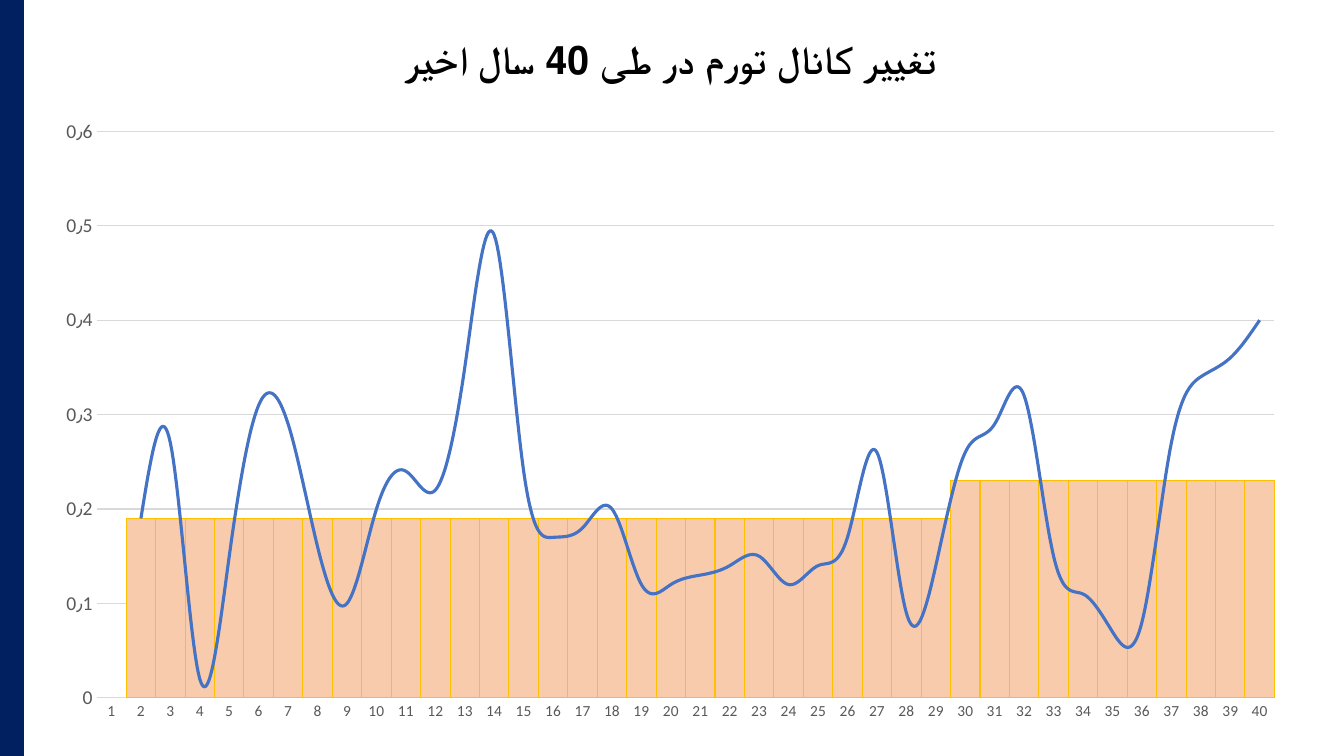
"""Build a slide charting forty years of inflation against its average channel."""
from typing import NamedTuple

from lxml import etree
from pptx import Presentation
from pptx.chart.chart import Chart
from pptx.chart.data import CategoryChartData
from pptx.dml.color import RGBColor
from pptx.dml.line import LineFormat
from pptx.enum.chart import XL_CHART_TYPE, XL_MARKER_STYLE, XL_TICK_MARK
from pptx.enum.shapes import MSO_SHAPE
from pptx.enum.text import MSO_AUTO_SIZE, PP_ALIGN
from pptx.oxml import parse_xml
from pptx.oxml.ns import nsdecls, qn
from pptx.slide import Slide
from pptx.util import Inches, Pt

COLUMNS = XL_CHART_TYPE.COLUMN_CLUSTERED
NO_MARKER = XL_MARKER_STYLE.NONE
NO_TICK = XL_TICK_MARK.NONE
RECTANGLE = MSO_SHAPE.RECTANGLE
CENTER = PP_ALIGN.CENTER
GROW = MSO_AUTO_SIZE.SHAPE_TO_FIT_TEXT

SLIDE_WIDTH, SLIDE_HEIGHT = Inches(13.33), Inches(7.5)
FONT = "Calibri"
NUMBER_FORMAT = "[$-3010000]General"
COLORS = {
    "sidebar": "002060",
    "title": "000000",
    "label": "595959",
    "grid": "D9D9D9",
    "channel": "F8CBAD",
    "channel_edge": "FFC000",
    "inflation": "4472C4",
}
HEADLINE = "تغییر کانال تورم در طی 40 سال اخیر"
CHANNEL = [None] + [0.19] * 28 + [0.23] * 11
INFLATION = [
    None, 0.19, 0.27, 0.02, 0.15, 0.31, 0.29, 0.16, 0.1, 0.2,
    0.24, 0.22, 0.35, 0.49, 0.24, 0.17, 0.18, 0.2, 0.12, 0.12,
    0.13, 0.14, 0.15, 0.12, 0.14, 0.17, 0.26, 0.09, 0.14, 0.26,
    0.29, 0.32, 0.15, 0.11, 0.07, 0.08, 0.27, 0.34, 0.36, 0.4,
]


class Area(NamedTuple):
    """A rectangle in percent of the slide's width and height."""

    left: float
    top: float
    width: float
    height: float

    def box(self) -> tuple[int, int, int, int]:
        """Return the rectangle in slide units."""
        column, row = SLIDE_WIDTH / 100, SLIDE_HEIGHT / 100
        return (round(self.left * column), round(self.top * row),
                round(self.width * column), round(self.height * row))


SIDEBAR_AREA = Area(0, 0, 1.73, 100)
CHART_AREA = Area(3.08, 14.13, 93.62, 82.93)
HEADLINE_AREA = Area(27.16, 4, 45.46, 7.6)
PLOT_PERCENT = {"x": 4.4, "y": 3.9, "w": 93.6, "h": 90.4}


def color(name: str) -> RGBColor:
    """Look up a named colour."""
    return RGBColor.from_string(COLORS[name])


def style_line(line: LineFormat, name: str, points: float) -> None:
    """Give a line its colour and width."""
    line.color.rgb = color(name)
    line.width = Pt(points)


def add_sidebar(slide: Slide) -> None:
    """Draw the band along the left edge."""
    sidebar = slide.shapes.add_shape(RECTANGLE, *SIDEBAR_AREA.box())
    sidebar.shadow.inherit = False
    sidebar.fill.solid()
    sidebar.fill.fore_color.rgb = color("sidebar")
    style_line(sidebar.line, "sidebar", 1)


def move_inflation_to_line(chart: Chart) -> None:
    """Turn the second column series into a line on the same axes."""
    columns = chart.plots[0]._element
    inflation = columns.findall(qn("c:ser"))[1]
    for column_setting in inflation.findall(qn("c:invertIfNegative")):
        inflation.remove(column_setting)
    line_plot = parse_xml(
        f'<c:lineChart {nsdecls("c")}><c:grouping val="standard"/>'
        '<c:varyColors val="0"/><c:marker val="1"/></c:lineChart>'
    )
    line_plot.insert(2, inflation)
    for axis_id in columns.findall(qn("c:axId")):
        etree.SubElement(line_plot, qn("c:axId")).set("val", axis_id.get("val"))
    columns.addnext(line_plot)


def fix_plot_area(chart: Chart) -> None:
    """Place the inner plot area at fixed shares of the chart."""
    plot_area = chart._chartSpace.find(f".//{qn('c:plotArea')}")
    for automatic in plot_area.findall(qn("c:layout")):
        plot_area.remove(automatic)
    modes = "".join(f'<c:{side}Mode val="edge"/>' for side in "xy")
    shares = "".join(
        f'<c:{side} val="{percent / 100:.3f}"/>' for side, percent in PLOT_PERCENT.items()
    )
    plot_area.insert(0, parse_xml(
        f'<c:layout {nsdecls("c")}><c:manualLayout><c:layoutTarget val="inner"/>'
        f"{modes}{shares}</c:manualLayout></c:layout>"
    ))


def style_axes(chart: Chart) -> None:
    """Format both axes, their labels and the gridlines."""
    years, rates = chart.category_axis, chart.value_axis
    for axis, size in ((years, 11), (rates, 14)):
        axis.major_tick_mark = axis.minor_tick_mark = NO_TICK
        axis.tick_labels.number_format = NUMBER_FORMAT
        axis.tick_labels.number_format_is_linked = False
        font = axis.tick_labels.font
        font.name, font.size = FONT, Pt(size)
        font.color.rgb = color("label")
    style_line(years.format.line, "grid", 0.75)
    rates.format.line.fill.background()
    rates.minimum_scale, rates.maximum_scale, rates.major_unit = 0, 0.6, 0.1
    style_line(rates.major_gridlines.format.line, "grid", 0.75)


def add_inflation_chart(slide: Slide) -> None:
    """Draw yearly inflation as a line over the channel columns."""
    data = CategoryChartData()
    data.categories = [str(year) for year in range(1, len(INFLATION) + 1)]
    data.add_series("Series 1", CHANNEL)
    data.add_series("Series 2", INFLATION)
    chart = slide.shapes.add_chart(COLUMNS, *CHART_AREA.box(), data).chart
    chart.has_legend = chart.has_title = False
    chart.font.name, chart.font.size = FONT, Pt(10)
    chart.font.color.rgb = color("title")
    move_inflation_to_line(chart)
    fix_plot_area(chart)
    style_axes(chart)

    channel_plot, inflation_plot = chart.plots
    channel_plot.gap_width = 0
    channel_plot.vary_by_categories = False
    channel = channel_plot.series[0]
    channel.format.fill.solid()
    channel.format.fill.fore_color.rgb = color("channel")
    style_line(channel.format.line, "channel_edge", 0.75)
    inflation = inflation_plot.series[0]
    inflation.smooth = True
    inflation.marker.style = NO_MARKER
    style_line(inflation.format.line, "inflation", 2.25)


def add_headline(slide: Slide) -> None:
    """Write the centred right-to-left headline."""
    frame = slide.shapes.add_textbox(*HEADLINE_AREA.box()).text_frame
    frame.word_wrap = True
    frame.auto_size = GROW
    frame.text = HEADLINE
    headline = frame.paragraphs[0]
    headline.alignment = CENTER
    headline._p.get_or_add_pPr().set("rtl", "1")
    font = headline.runs[0].font
    font.name, font.size, font.bold = FONT, Pt(28), True
    font.color.rgb = color("title")


def main() -> None:
    """Build and save the presentation."""
    presentation = Presentation()
    presentation.slide_width, presentation.slide_height = SLIDE_WIDTH, SLIDE_HEIGHT
    slide = presentation.slides.add_slide(presentation.slide_layouts[6])
    add_sidebar(slide)
    add_inflation_chart(slide)
    add_headline(slide)
    presentation.save("out.pptx")


if __name__ == "__main__":
    main()
